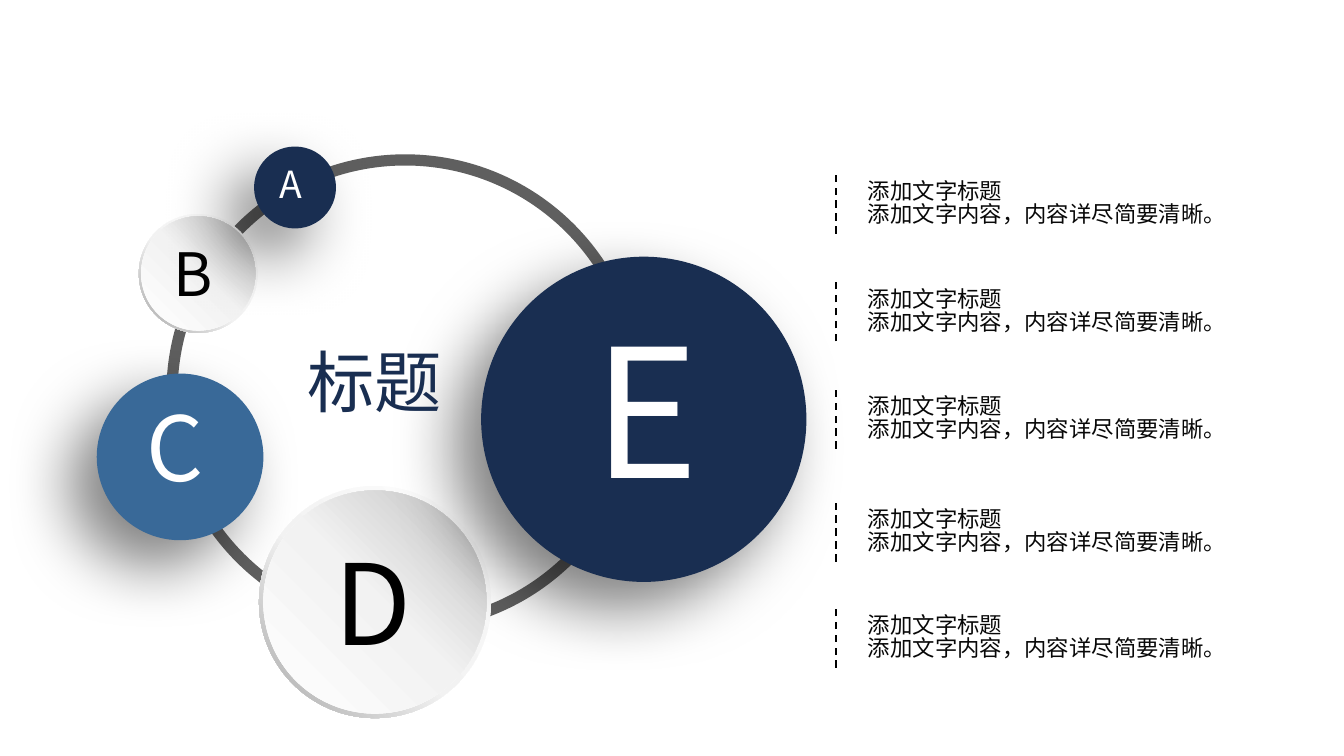
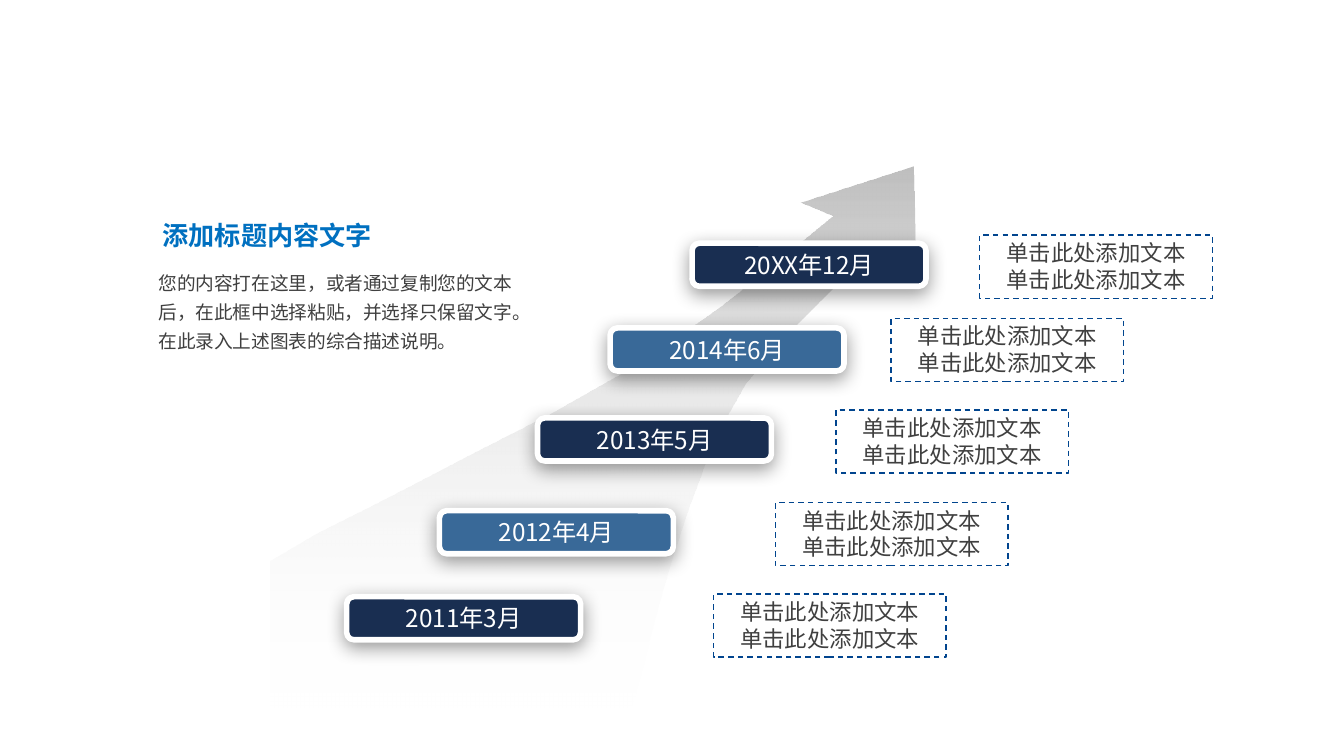
"""Builds two slides: a ring of five lettered discs and a rising arrow of dates."""
from lxml import etree
from pptx import Presentation, util as u
from pptx.dml.color import RGBColor
from pptx.enum import dml, shapes, text
from pptx.oxml.ns import qn

FONT = "Noto Sans CJK SC"
NAVY = RGBColor(0x19, 0x2E, 0x51)
BLUE = RGBColor(0x39, 0x69, 0x98)
EDGE = RGBColor(0x01, 0x45, 0x8E)
HEAD = RGBColor(0x00, 0x70, 0xC0)
WHITE = RGBColor(0xFF, 0xFF, 0xFF)
BLACK = RGBColor(0x00, 0x00, 0x00)
INK = RGBColor(0x08, 0x08, 0x08)
DARK = RGBColor(0x40, 0x40, 0x40)
TRACK = RGBColor(0x5F, 0x5F, 0x5F)
PALE = RGBColor(0xF2, 0xF2, 0xF2)
GREY = RGBColor(0xBF, 0xBF, 0xBF)
STEEL = RGBColor(0xA6, 0xA6, 0xA6)

RIM = (135, [(0, WHITE, 100), (55, PALE, 100), (100, STEEL, 100)])
DOME = (315, [(0, WHITE, 100), (51, PALE, 100), (100, GREY, 100)])
FADE = (90, [(0, GREY, 100), (100, WHITE, 0)])
DEEP = (50, 35, 20, 135)
SOFT = (40, 10, 3, 90)
OVAL = shapes.MSO_SHAPE.OVAL
LEFT, MID = text.PP_ALIGN.LEFT, text.PP_ALIGN.CENTER
TOP, CORE = text.MSO_ANCHOR.TOP, text.MSO_ANCHOR.MIDDLE
GROW = text.MSO_AUTO_SIZE.SHAPE_TO_FIT_TEXT


def paint(shape, fill=None, line=None, width=1, shade=None):
    """Set fill (colour or gradient), outline and shadow."""
    props = shape._element.spPr
    if fill is None:
        shape.fill.background()
    elif isinstance(fill, RGBColor):
        shape.fill.solid()
        shape.fill.fore_color.rgb = fill
    else:
        turn, stops = fill
        shape.fill.gradient()
        grad = props.find(qn("a:gradFill"))
        grad.find(qn("a:lin")).set("ang", str(turn * 60000))
        bag = grad.find(qn("a:gsLst"))
        for old in list(bag):
            bag.remove(old)
        for place, tint, alpha in stops:
            stop = etree.SubElement(bag, qn("a:gs"), pos=str(place * 1000))
            hue = etree.SubElement(stop, qn("a:srgbClr"), val=str(tint))
            etree.SubElement(hue, qn("a:alpha"), val=str(alpha * 1000))
    if line is None:
        shape.line.fill.background()
    else:
        shape.line.color.rgb = line
        shape.line.width = u.Pt(width)
    shape.shadow.inherit = False
    if shade:
        alpha, blur, dist, turn = shade
        cast = etree.SubElement(
            props.find(qn("a:effectLst")), qn("a:outerShdw"),
            blurRad=str(u.Pt(blur)), dist=str(u.Pt(dist)),
            dir=str(turn * 60000), algn="ctr", rotWithShape="0")
        hue = etree.SubElement(cast, qn("a:srgbClr"), val="000000")
        etree.SubElement(hue, qn("a:alpha"), val=str(alpha * 1000))


def write(shape, words, size, tint, align=LEFT, anchor=TOP,
          pad=(0.1, 0.05), wrap=True, grow=False):
    """Fill a shape with text, one paragraph a line."""
    frame = shape.text_frame
    frame.text = words
    frame.word_wrap = wrap
    frame.vertical_anchor = anchor
    if grow:
        frame.auto_size = GROW
    frame.margin_left = frame.margin_right = u.Inches(pad[0])
    frame.margin_top = frame.margin_bottom = u.Inches(pad[1])
    for para in frame.paragraphs:
        para.alignment = align
        para.font.size = u.Pt(size)
        para.font.name = FONT
        para.font.color.rgb = tint
        base = para._p.pPr.find(qn("a:defRPr"))
        etree.SubElement(base, qn("a:ea"), typeface=FONT)


deck = Presentation()
deck.slide_width = u.Inches(10)
deck.slide_height = deck.slide_width * 9 // 16
blank = deck.slide_layouts[6]

page = deck.slides.add_slide(blank).shapes
track = page.add_shape(OVAL, *map(u.Inches, (1.28, 1.19, 3.47, 3.47)))
paint(track, line=TRACK, width=6)

discs = [
    ("C", 0.72, 2.78, 1.24, BLUE, 48, (0.99, 2.87, 0.65, 0.91)),
    ("D", 1.96, 3.65, 1.66, DOME, 60, (2.39, 3.92, 0.84, 1.11)),
    ("B", 1.05, 1.61, 0.85, DOME, 32, (1.19, 1.71, 0.48, 0.64)),
    ("A", 1.89, 1.09, 0.61, NAVY, 20, (1.98, 1.15, 0.4, 0.44)),
    ("E", 3.58, 1.91, 2.42, NAVY, 96, (4.32, 2.18, 0.94, 1.72)),
]
for mark, x, y, wide, fill, size, box in discs:
    domed = fill is DOME
    if domed:
        lip = wide * 0.02
        span = wide + 2 * lip
        rim = page.add_shape(shapes.MSO_SHAPE.DONUT,
                             *map(u.Inches, (x - lip, y - lip, span, span)))
        rim.adjustments[0] = 0.05
        paint(rim, RIM)
    disc = page.add_shape(OVAL, *map(u.Inches, (x, y, wide, wide)))
    paint(disc, fill, shade=None if domed else DEEP)
    write(page.add_textbox(*map(u.Inches, box)), mark, size,
          BLACK if domed else WHITE, wrap=False, grow=True)

title = page.add_textbox(*map(u.Inches, (2.19, 2.48, 1.21, 0.71)))
write(title, "标题", 36, NAVY, wrap=False, grow=True)

for y in (1.27, 2.07, 2.87, 3.71, 4.5):
    for drop, wide, words in [(0, 1.21, "添加文字标题"),
                              (0.17, 2.89, "添加文字内容，内容详尽简要清晰。")]:
        box = page.add_textbox(*map(u.Inches, (6.36, y + drop, wide, 0.3)))
        write(box, words, 12, INK, wrap=False, grow=True)
    bar = page.add_connector(shapes.MSO_CONNECTOR.STRAIGHT,
                             *map(u.Inches, (6.22, y + 0.47, 6.22, y + 0.02)))
    bar.line.color.rgb = BLACK
    bar.line.width = u.Pt(1)
    bar.line.dash_style = dml.MSO_LINE.DASH
    etree.SubElement(bar._element.spPr, qn("a:effectLst"))

page = deck.slides.add_slide(blank).shapes
curve = [
    (2.01, 4.17), (2.35, 3.97), (2.69, 3.8), (3.06, 3.61), (3.52, 3.37),
    (4.09, 3.08), (4.46, 2.87), (4.71, 2.73), (5.05, 2.5), (5.36, 2.28),
    (5.64, 2.06), (5.86, 1.88), (6.19, 1.61), (5.95, 1.51), (6.79, 1.24),
    (6.81, 1.97), (6.55, 1.8), (6.22, 2.12), (5.82, 2.52), (5.54, 2.86),
    (5.41, 3.09), (5.28, 3.34), (5.2, 3.57), (5.12, 3.78), (4.98, 4.21),
    (4.87, 4.6), (4.79, 4.92), (4.69, 5.28), (2.01, 5.28),
]
dots = [(u.Inches(x), u.Inches(y)) for x, y in curve]
pen = page.build_freeform(*dots[0])
pen.add_line_segments(dots[1:], close=True)
paint(pen.convert_to_shape(), FADE)

steps = [
    ("2011年3月", 2.58, 4.44, 5.31, 4.42),
    ("2012年4月", 3.27, 3.8, 5.77, 3.74),
    ("2013年5月", 4, 3.11, 6.22, 3.05),
    ("2014年6月", 4.54, 2.44, 6.63, 2.37),
    ("20XX年12月", 5.15, 1.81, 7.29, 1.75),
]
for turn, (date, x, y, left, top) in enumerate(steps):
    tag = page.add_shape(shapes.MSO_SHAPE.ROUNDED_RECTANGLE,
                         *map(u.Inches, (x, y, 1.74, 0.32)))
    paint(tag, (NAVY, BLUE)[turn % 2], WHITE, 3, SOFT)
    write(tag, date, 13, WHITE, MID, CORE, (0.07, 0.03))
    note = page.add_shape(shapes.MSO_SHAPE.RECTANGLE,
                          *map(u.Inches, (left, top, 1.73, 0.47)))
    paint(note, line=EDGE, width=0.75)
    note.line.dash_style = dml.MSO_LINE.DASH
    write(note, "\n".join(["单击此处添加文本"] * 2), 12, DARK, MID,
          pad=(0.07, 0.03), grow=True)

body = page.add_textbox(*map(u.Inches, (1.11, 1.93, 2.78, 0.99)))
write(body, "您的内容打在这里，或者通过复制您的文本后，在此框中选择粘贴，"
      "并选择只保留文字。在此录入上述图表的综合描述说明。", 10, DARK, pad=(0.07, 0.04))
body.text_frame.paragraphs[0].line_spacing = 1.3

head = page.add_textbox(*map(u.Inches, (1.14, 1.51, 2.37, 0.48)))
write(head, "添加标题内容文字", 14, HEAD, anchor=CORE, pad=(0.07, 0.04))
head.text_frame.paragraphs[0].font.bold = True

deck.save("out.pptx")
